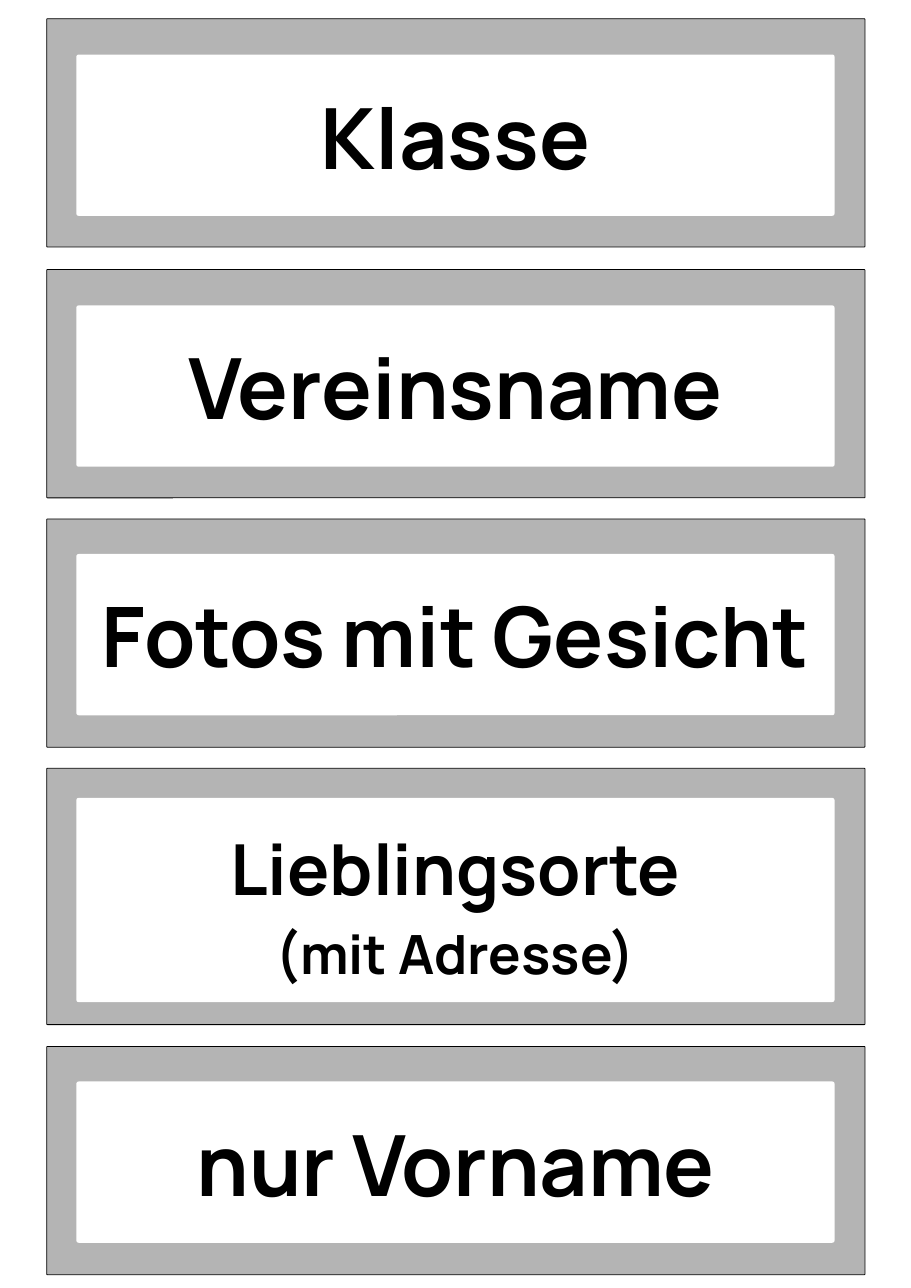
from dataclasses import dataclass

from pptx import Presentation
from pptx.dml.color import RGBColor
from pptx.enum.shapes import MSO_SHAPE
from pptx.enum.text import MSO_AUTO_SIZE, PP_ALIGN
from pptx.shapes.autoshape import Shape
from pptx.shapes.shapetree import GroupShapes, SlideShapes
from pptx.util import Inches, Pt

GREY, WHITE, BLACK = "B4B4B4", "FFFFFF", "000000"


@dataclass
class Line:
    text: str
    size: int = 78


@dataclass
class Card:
    top: float
    lines: list[Line]
    high: float = 2.93
    inset: float = 0.45
    face: float = 2.07


CARDS = [
    Card(0.24, [Line("Klasse")], inset=0.46),
    Card(3.46, [Line("Vereinsname")], inset=0.46),
    Card(6.66, [Line("Fotos mit Gesicht", 77)]),
    Card(9.86, [Line("Lieblingsorte", 65), Line("(mit Adresse)", 50)],
         high=3.29, inset=0.38, face=2.62),
    Card(13.43, [Line("nur Vorname")]),
]


def color(code: str) -> RGBColor:
    return RGBColor.from_string(code)


def apply(target: object, form: dict) -> None:
    for name, value in form.items():
        setattr(target, name, value)


# Panel with slightly rounded corners
def add_panel(group: GroupShapes, left: float, top: float, wide: float,
              high: float, round_by: float, fill: str) -> Shape:
    panel = group.add_shape(MSO_SHAPE.ROUNDED_RECTANGLE, Inches(left),
                            Inches(top), Inches(wide), Inches(high))
    panel.adjustments[0] = round_by / high
    panel.shadow.inherit = False
    panel.fill.solid()
    panel.fill.fore_color.rgb = color(fill)
    panel.line.fill.background()
    return panel


# Centred label, one paragraph a line
def add_label(group: GroupShapes, top: float, lines: list[Line]) -> None:
    high = sum(line.size for line in lines) * 1.37 / 72
    box = group.add_textbox(Inches(1.07), Inches(top), Inches(9.55), Inches(high))
    frame = box.text_frame
    apply(frame, dict(word_wrap=True, auto_size=MSO_AUTO_SIZE.SHAPE_TO_FIT_TEXT,
                      margin_left=0, margin_top=0, margin_right=0, margin_bottom=0))
    for place, line in enumerate(lines):
        para = frame.add_paragraph() if place else frame.paragraphs[0]
        run = para.add_run()
        run.text = line.text
        apply(para, dict(alignment=PP_ALIGN.CENTER, line_spacing=Pt(line.size * 1.4)))
        apply(run.font, dict(name="Manrope", size=Pt(line.size), bold=True))
        run.font.color.rgb = color(BLACK)


def add_card(shapes: SlideShapes, card: Card) -> None:
    group = shapes.add_group_shape().shapes
    frame = add_panel(group, 0.6, card.top, 10.5, card.high, 0.01, GREY)
    frame.line.color.rgb = color(BLACK)
    frame.line.width = Pt(0.75)
    top = card.top + card.inset
    add_panel(group, 0.98, top, 9.73, card.face, 0.03, WHITE)
    add_label(group, top + 0.17, card.lines)


def main() -> None:
    deck = Presentation()
    apply(deck, dict(slide_width=Inches(11.69), slide_height=Inches(16.53)))
    slide = deck.slides.add_slide(deck.slide_layouts[6])
    for card in CARDS:
        add_card(slide.shapes, card)
    deck.save("out.pptx")


if __name__ == "__main__":
    main()
